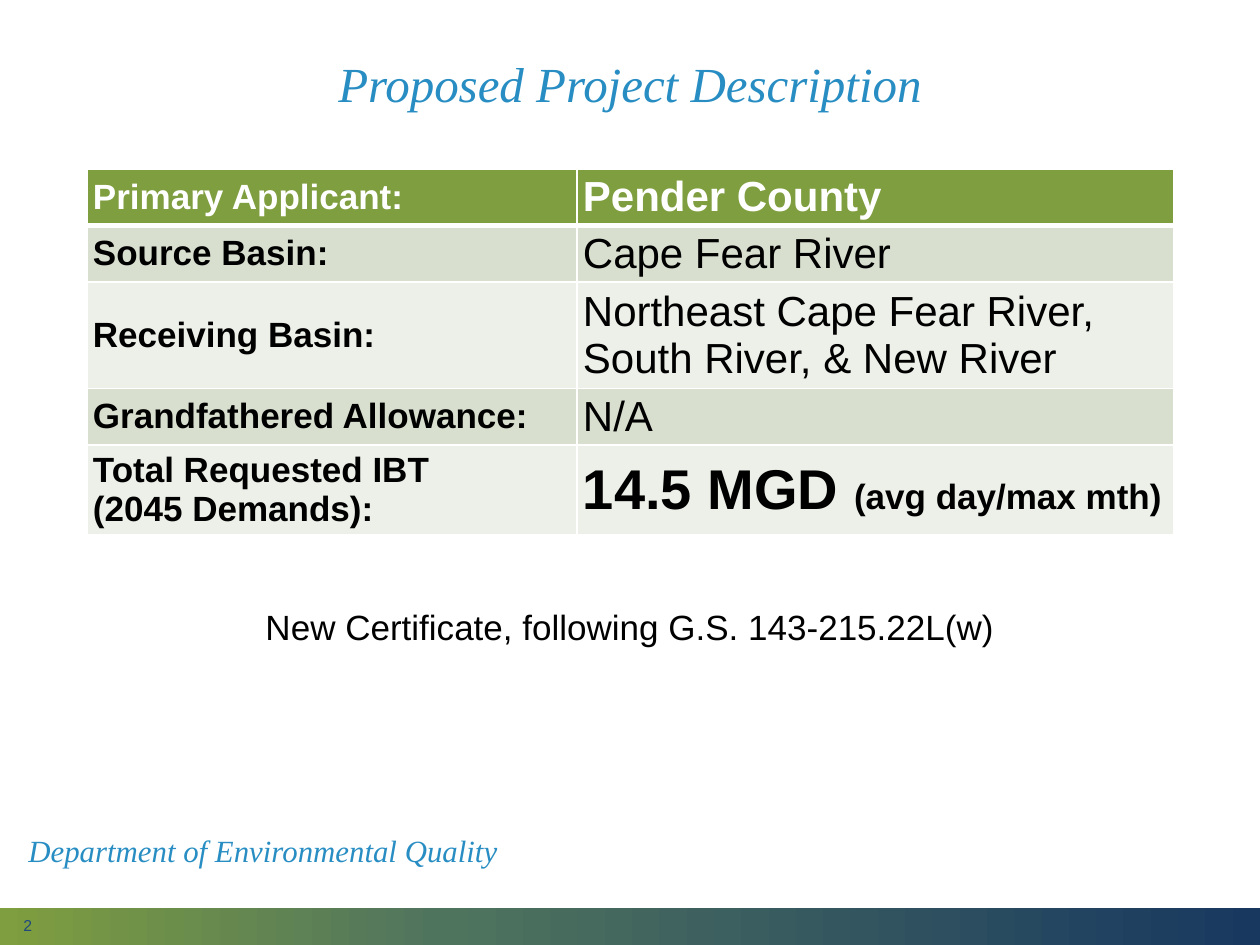
from copy import deepcopy
from dataclasses import dataclass

from pptx import Presentation
from pptx.dml.color import RGBColor as Rgb
from pptx.enum.shapes import MSO_SHAPE as Shape
from pptx.enum.text import MSO_ANCHOR as Anchor, PP_ALIGN as Align
from pptx.oxml import parse_xml
from pptx.oxml.ns import nsdecls, qn
from pptx.util import Pt

EMU_PER_PX = 914400 / 126


def px(length):
    return round(length * EMU_PER_PX)


@dataclass(frozen=True)
class Theme:
    sans: str = "Arial"
    serif: str = "Times New Roman"
    accent: str = "288DC2"
    number: str = "1F497D"
    ink: str = "000000"
    white: str = "FFFFFF"
    header: str = "7F9E3F"
    bands: tuple = ("D8DFCF", "ECF0E8")
    gradient: tuple = ((0, "7F9E3F"), (0.35, "4F745E"), (1, "183860"))
    title_size: float = 28
    department_size: float = 17.6
    label_size: float = 20
    value_size: float = 24
    total_size: float = 32
    number_size: float = 9


class SlideBuilder:
    def __init__(self, deck, theme):
        self.theme = theme
        self.page = deck.slides.add_slide(deck.slide_layouts[1])

    def place(self, shape, box):
        for name, length in zip(("left", "top", "width", "height"), box):
            setattr(shape, name, px(length))

    def style(self, font, color, **values):
        for name, value in values.items():
            setattr(font, name, value)
        font.color.rgb = Rgb.from_string(color)

    def set_text(self, frame, text, color, anchor=Anchor.MIDDLE, align=Align.LEFT,
                 spacing=0.9, **values):
        frame.word_wrap = True
        frame.vertical_anchor = anchor
        para = frame.paragraphs[0]
        para.alignment = align
        para.line_spacing = spacing
        para.space_before = Pt(0)
        span = para.add_run()
        span.text = text
        self.style(span.font, color, **values)
        return para

    def gradient_bar(self, box):
        bar = self.page.shapes.add_shape(Shape.RECTANGLE, *map(px, box))
        bar.shadow.inherit = False
        bar.line.fill.background()
        bar.fill.gradient()
        bar.fill.gradient_angle = 0
        stop_list = bar._element.spPr.find(".//" + qn("a:gsLst"))
        stop_list.insert(1, deepcopy(stop_list[0]))
        for stop, (position, color) in zip(bar.fill.gradient_stops, self.theme.gradient):
            stop.position = position
            stop.color.rgb = Rgb.from_string(color)

    def title(self, text, box):
        shape = self.page.shapes.title
        self.place(shape, box)
        self.set_text(shape.text_frame, text, self.theme.accent, align=Align.CENTER,
                      name=self.theme.serif, size=Pt(self.theme.title_size), italic=True)

    def body(self, text, box):
        shape = self.page.placeholders[1]
        self.place(shape, box)
        para = self.set_text(shape.text_frame, text, self.theme.ink, anchor=Anchor.TOP,
                             align=Align.CENTER, name=self.theme.sans,
                             size=Pt(self.theme.label_size))
        props = para._p.get_or_add_pPr()
        props.set("marL", "0")
        props.set("indent", "0")
        props.append(parse_xml(f"<a:buNone {nsdecls('a')}/>"))

    def label(self, text, box, color, **values):
        shape = self.page.shapes.add_textbox(*map(px, box))
        self.set_text(shape.text_frame, text, color, **values)

    def border(self, cell, widths):
        """Draw white cell edges; widths are points for left, right, top, bottom."""
        props = cell._tc.get_or_add_tcPr()
        for index, (side, width) in enumerate(zip("LRTB", widths)):
            props.insert(index, parse_xml(
                f'<a:ln{side} {nsdecls("a")} w="{Pt(width)}"><a:solidFill>'
                f'<a:srgbClr val="{self.theme.white}"/></a:solidFill></a:ln{side}>'))

    def cell(self, cell, paragraphs, fill, color, widths):
        """Fill a cell; each paragraph is a list of (text, size, bold)."""
        margins = {"margin_left": 6, "margin_right": 6, "margin_top": 3, "margin_bottom": 3}
        for name, length in margins.items():
            setattr(cell, name, px(length))
        cell.vertical_anchor = Anchor.MIDDLE
        cell.fill.solid()
        cell.fill.fore_color.rgb = Rgb.from_string(fill)
        frame = cell.text_frame
        for index, spans in enumerate(paragraphs):
            para = frame.add_paragraph() if index else frame.paragraphs[0]
            for text, size, bold in spans:
                span = para.add_run()
                span.text = text
                self.style(span.font, color, name=self.theme.sans, size=Pt(size), bold=bold)
        self.border(cell, widths)

    def table(self, rows, left, top, column_widths, row_height):
        theme = self.theme
        box = (left, top, sum(column_widths), row_height * len(rows))
        table = self.page.shapes.add_table(len(rows), len(column_widths), *map(px, box)).table
        for column, width in zip(table.columns, column_widths):
            column.width = px(width)
        for r, row in enumerate(rows):
            fill = theme.bands[(r - 1) % 2] if r else theme.header
            color = theme.ink if r else theme.white
            widths = (1, 1, 3 if r == 1 else 1, 1 if r else 3)
            for c, paragraphs in enumerate(row):
                self.cell(table.cell(r, c), paragraphs, fill, color, widths)


def main():
    theme = Theme()
    deck = Presentation()
    deck.slide_width, deck.slide_height = px(1260), px(945)
    slide = SlideBuilder(deck, theme)

    def heading(*lines):
        return [[(line, theme.label_size, True)] for line in lines]

    def value(text, bold=False):
        return [[(text, theme.value_size, bold)]]

    total = [[("14.5 MGD ", theme.total_size, True),
              ("(avg day/max mth)", theme.label_size, True)]]
    rows = [
        (heading("Primary Applicant:"), value("Pender County", True)),
        (heading("Source Basin:"), value("Cape Fear River")),
        (heading("Receiving Basin:"),
         value("Northeast Cape Fear River, South River, & New River")),
        (heading("Grandfathered Allowance:"), value("N/A")),
        (heading("Total Requested IBT", "(2045 Demands):"), total),
    ]

    slide.gradient_bar((0, 908, 1260, 37))
    slide.title("Proposed Project Description", (87, 14, 1086, 146))
    slide.label("2", (11, 916, 284, 19), theme.number, spacing=1,
                name=theme.sans, size=Pt(theme.number_size))
    slide.table(rows, 87, 169, (490, 597), 52)
    slide.label("Department of Environmental Quality", (16, 827, 517, 52), theme.accent,
                name=theme.serif, size=Pt(theme.department_size), italic=True)
    slide.body("New Certificate, following G.S. 143-215.22L(w)", (87, 604, 1086, 76))
    deck.save("out.pptx")


if __name__ == "__main__":
    main()
